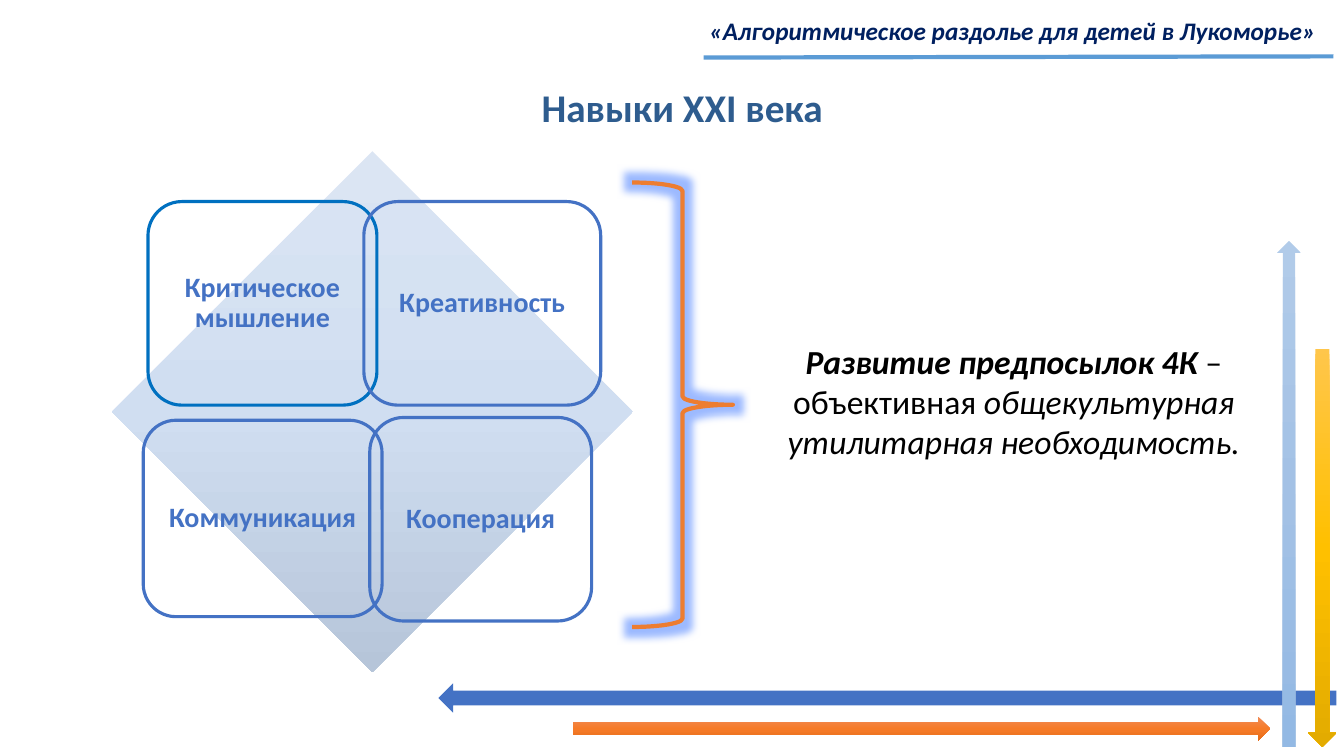
from copy import deepcopy
from lxml import etree
from pptx import Presentation, util as u
from pptx.dml.color import RGBColor
from pptx.enum import shapes, text
from pptx.oxml.ns import qn

HUE = {
    "title": "2E5C8E", "navy": "002060", "rule": "5B9BD5", "blue": "4472C4",
    "edge": "0070C0", "brace": "ED7D31", "glow": "5B8CFF", "black": "000000",
}
FADE = {
    "sky": ("B1CBE9", "A3C1E5", "93B9E4"),
    "gold": ("FFC64B", "FFC000", "E3AB00"),
    "orange": ("F18C57", "F67B28", "E56C19"),
    "pale": ("DBE5F3", "D0DEF1", "B6C5D9"),
}
KIND = shapes.MSO_SHAPE


def write(shape, *runs, size, hue, bold=False, ital=False, pad=None,
          wrap=True, mid=False, lead=None):
    """Fill a shape with one centred paragraph; a run is a string or (string, bold, italic)."""
    frame = shape.text_frame
    frame.word_wrap = wrap
    frame.auto_size = text.MSO_AUTO_SIZE.NONE
    frame.vertical_anchor = text.MSO_ANCHOR.MIDDLE if mid else text.MSO_ANCHOR.TOP
    if pad is not None:
        frame.margin_left = frame.margin_right = u.Cm(pad)
        frame.margin_top = frame.margin_bottom = u.Cm(pad)
    para = frame.paragraphs[0]
    para.alignment = text.PP_ALIGN.CENTER
    if lead:
        para.line_spacing = lead
    for item in runs:
        words, strong, slant = (item, bold, ital) if isinstance(item, str) else item
        run = para.add_run()
        run.text = words
        font = run.font
        font.name, font.size = "Calibri", u.Pt(size)
        font.bold, font.italic = strong, slant
        font.color.rgb = RGBColor.from_string(HUE[hue])


def draw(kind, box, fill=None, line=None, width=2.25):
    """Add a preset shape; fill names a plain colour or a vertical fade."""
    shape = slide.shapes.add_shape(kind, *map(u.Cm, box))
    shape.shadow.inherit = False
    if fill in FADE:
        shape.fill.gradient()
        shape.fill.gradient_angle = 270
        stops = shape._element.spPr.find(".//" + qn("a:gsLst"))
        stops.append(deepcopy(stops[0]))
        for stop, hue, place in zip(shape.fill.gradient_stops, FADE[fill], (0, 0.5, 1)):
            stop.position = place
            stop.color.rgb = RGBColor.from_string(hue)
    elif fill:
        shape.fill.solid()
        shape.fill.fore_color.rgb = RGBColor.from_string(HUE[fill])
    else:
        shape.fill.background()
    if line:
        shape.line.color.rgb = RGBColor.from_string(HUE[line])
        shape.line.width = u.Pt(width)
    else:
        shape.line.fill.background()
    return shape


deck = Presentation()
deck.slide_width, deck.slide_height = u.Cm(33.87), u.Cm(19.05)
slide = deck.slides.add_slide(deck.slide_layouts[5])

# Title
title = slide.shapes.title
title.left, title.top, title.width, title.height = map(u.Cm, (1.9, 1.98, 30.58, 1.45))
write(title, "Навыки XXI века", size=28, hue="title", bold=True, pad=0.13)

# Border arrows
for kind, box, fill in (
    (KIND.LEFT_ARROW, (11.05, 17.22, 22.63, 0.74), "blue"),
    (KIND.UP_ARROW, (32.18, 6.07, 0.61, 12.75), "sky"),
    (KIND.DOWN_ARROW, (32.97, 8.79, 0.71, 10.03), "gold"),
    (KIND.RIGHT_ARROW, (14.43, 18.06, 17.58, 0.61), "orange"),
):
    draw(kind, box, fill)

# Header
rule = slide.shapes.add_connector(
    shapes.MSO_CONNECTOR.STRAIGHT, *map(u.Cm, (17.73, 1.45, 33.6, 1.42)))
rule.line.color.rgb = RGBColor.from_string(HUE["rule"])
rule.line.width = u.Pt(3)
etree.SubElement(rule._element.spPr, qn("a:effectLst"))
head = slide.shapes.add_textbox(*map(u.Cm, (17.53, -0.15, 16.13, 1.35)))
write(head, "«Алгоритмическое раздолье для детей в Лукоморье» ",
      size=18, hue="navy", bold=True, ital=True, wrap=False, lead=u.Pt(33.6))

# Four skills on a diamond
draw(KIND.DIAMOND, (2.82, 3.81, 13.13, 13.13), "pale")
for label, box, edge in (
    ("Критическое мышление", (3.73, 5.08, 5.77, 5.13), "edge"),
    ("Креативность", (9.17, 5.08, 5.97, 5.13), "blue"),
    ("Коммуникация", (3.61, 10.59, 6.02, 4.95), "blue"),
    ("Кооперация", (9.32, 10.52, 5.59, 5.13), "blue"),
):
    card = draw(KIND.ROUNDED_RECTANGLE, box, line=edge)
    write(card, label, size=20, hue="blue", bold=True, pad=0.2, mid=True, lead=0.9)

# Glowing brace and conclusion
brace = draw(KIND.RIGHT_BRACE, (15.93, 4.6, 2.54, 11.2), line="brace", width=3)
glow = etree.SubElement(brace._element.spPr.find(qn("a:effectLst")),
                        qn("a:glow"), rad=str(u.Pt(11)))
tint = etree.SubElement(glow, qn("a:srgbClr"), val=HUE["glow"])
etree.SubElement(tint, qn("a:alpha"), val="60000")
goal = slide.shapes.add_textbox(*map(u.Cm, (18.92, 8.46, 13.26, 3.33)))
write(goal, ("Развитие предпосылок 4К ", True, True), ("– объективная ", False, False),
      ("общекультурная утилитарная необходимость.", False, True), size=24, hue="black")

deck.save("out.pptx")
